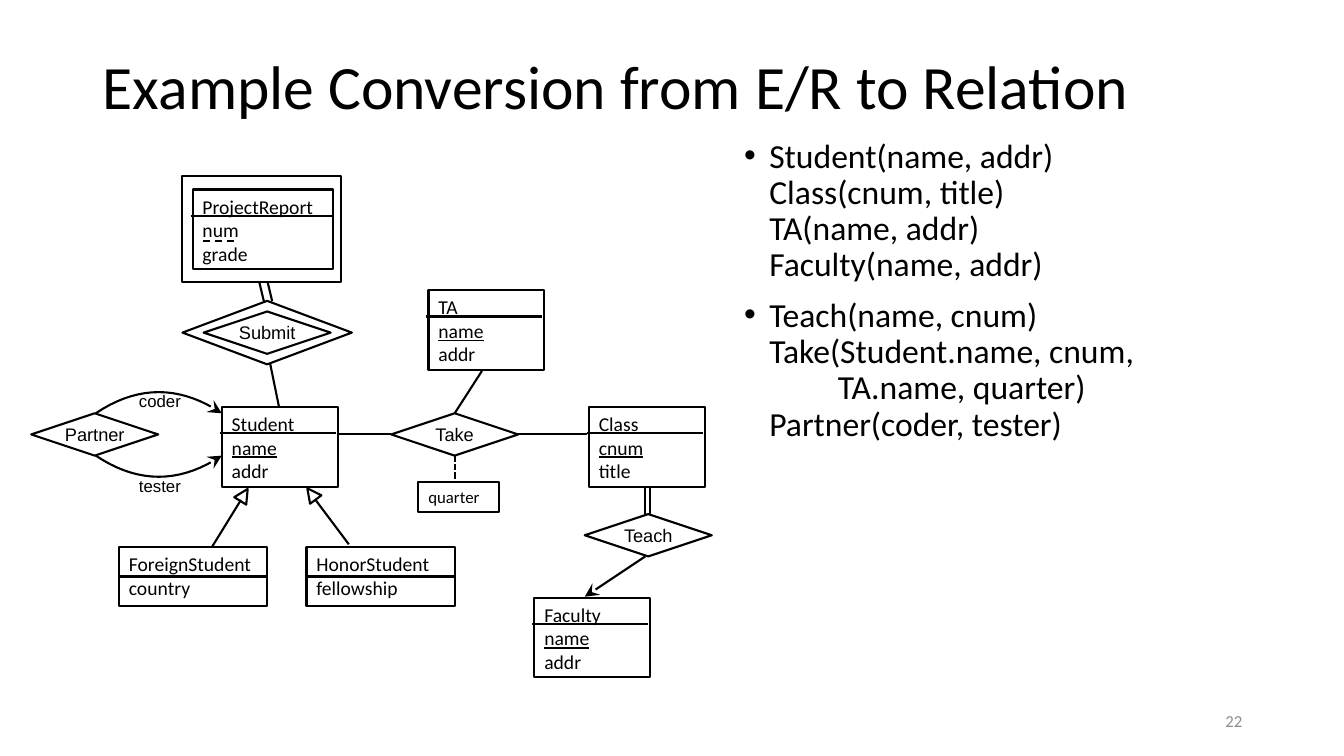
from lxml import etree
from pptx import Presentation
from pptx.dml.color import RGBColor
from pptx.enum.dml import MSO_LINE
from pptx.enum.shapes import MSO_CONNECTOR, MSO_SHAPE
from pptx.enum.text import MSO_ANCHOR, MSO_AUTO_SIZE, PP_ALIGN
from pptx.oxml.ns import qn
from pptx.util import Inches, Pt

BLACK = RGBColor(0x00, 0x00, 0x00)
WHITE = RGBColor(0xFF, 0xFF, 0xFF)
GRAY = RGBColor(0x8C, 0x8C, 0x8C)

# Sizes shared by the diagram parts
ENTITY_SIZE = (1.15, 0.79)
SUBCLASS_SIZE = (1.47, 0.58)
DIAMOND_SIZE = (1.26, 0.42)

# Left, top, name, key, other attribute
ENTITIES = [
    (2.2, 4.04, "Student", "name", "addr"),
    (5.3, 5.93, "Faculty", "name", "addr"),
    (4.25, 2.88, "TA", "name", "addr"),
    (5.84, 4.04, "Class", "cnum", "title"),
]
SUBCLASSES = [
    (1.18, 5.43, "ForeignStudent", "country"),
    (3.04, 5.43, "HonorStudent", "fellowship"),
]
# Centre x, centre y, name
RELATIONSHIPS = [
    (4.51, 4.31, "Take"),
    (6.43, 5.31, "Teach"),
    (2.65, 3.3, "Submit"),
    (0.94, 4.31, "Partner"),
]
# From x, from y, to x, to y
LINKS = [
    (3.36, 4.31, 3.88, 4.31),
    (5.14, 4.31, 5.82, 4.31),
    (4.51, 4.1, 4.78, 3.68),
    (2.68, 3.61, 2.78, 4.1),
    (6.4, 4.67, 6.4, 5.1),
    (6.45, 4.67, 6.45, 5.1),
    (2.57, 2.79, 2.62, 3),
    (2.65, 2.78, 2.7, 2.99),
    (2.1, 5.43, 2.39, 4.96),
    (3.46, 5.4, 3.13, 4.96),
]
# Bullet shown, left indent, space before, lines
BODY = [
    (True, 0.25, 10, ["Student(name, addr)", "Class(cnum, title)",
                      "TA(name, addr)", "Faculty(name, addr)"]),
    (True, 0.25, 10, ["Teach(name, cnum)", "Take(Student.name, cnum,"]),
    (False, 0.93, 0, ["TA.name, quarter)"]),
    (False, 0.25, 0, ["Partner(coder, tester)"]),
]


def apply_format(target, **values):
    for name, value in values.items():
        setattr(target, name, value)


def place(shape, left, top, width, height):
    apply_format(shape, left=Inches(left), top=Inches(top),
                 width=Inches(width), height=Inches(height))


def set_font(font, size, name="Calibri", color=BLACK):
    apply_format(font, size=Pt(size), name=name)
    font.color.rgb = color


def set_line(line, width=1.5):
    line.color.rgb = BLACK
    line.width = Pt(width)


def add_arrowhead(shape):
    etree.SubElement(shape.line._get_or_add_ln(), qn("a:tailEnd"),
                     type="stealth", w="lg", len="lg")


def add_link(slide, start_x, start_y, end_x, end_y, width=1.5, dash=None):
    link = slide.shapes.add_connector(
        MSO_CONNECTOR.STRAIGHT, Inches(start_x), Inches(start_y),
        Inches(end_x), Inches(end_y))
    set_line(link.line, width)
    if dash:
        link.line.dash_style = dash
    etree.SubElement(link._element.spPr, qn("a:effectLst"))
    return link


def add_outlined(slide, kind, left, top, width, height, filled=True):
    shape = slide.shapes.add_shape(
        kind, Inches(left), Inches(top), Inches(width), Inches(height))
    shape.shadow.inherit = False
    if filled:
        shape.fill.solid()
        shape.fill.fore_color.rgb = WHITE
    else:
        shape.fill.background()
    set_line(shape.line)
    return shape


def add_box(slide, left, top, width, height, paragraphs, size=14, key=None):
    """A rectangle whose paragraphs are lists of lines."""
    box = add_outlined(slide, MSO_SHAPE.RECTANGLE, left, top, width, height)
    frame = box.text_frame
    frame.vertical_anchor = MSO_ANCHOR.TOP
    for index, lines in enumerate(paragraphs):
        paragraph = frame.add_paragraph() if index else frame.paragraphs[0]
        paragraph.alignment = PP_ALIGN.LEFT
        for line_index, line in enumerate(lines):
            if line_index:
                paragraph.add_line_break()
            run = paragraph.add_run()
            run.text = line
            set_font(run.font, size)
            if line == key:
                run.font.underline = True


def add_entity(slide, left, top, name, key, attribute):
    width, height = ENTITY_SIZE
    add_box(slide, left, top, width, height, [[name, key], [attribute]], key=key)
    add_link(slide, left - 0.02, top + 0.26, left + width - 0.02, top + 0.26)


def add_subclass(slide, left, top, name, attribute):
    width, height = SUBCLASS_SIZE
    add_box(slide, left, top, width, height, [[name, attribute]])
    add_link(slide, left, top + 0.29, left + width, top + 0.29)


def add_diamond(slide, center_x, center_y, name="", size=DIAMOND_SIZE):
    width, height = size
    diamond = add_outlined(slide, MSO_SHAPE.DIAMOND, center_x - width / 2,
                           center_y - height / 2, width, height)
    if name:
        frame = diamond.text_frame
        apply_format(frame, margin_left=0, margin_right=0, margin_top=0,
                     margin_bottom=0, word_wrap=False,
                     vertical_anchor=MSO_ANCHOR.MIDDLE)
        paragraph = frame.paragraphs[0]
        paragraph.text = name
        paragraph.alignment = PP_ALIGN.CENTER
        set_font(paragraph.font, 13, "Arial")


def add_role_arc(slide, start_y, bulge):
    """A parabolic arrow from Partner to Student."""
    left, width, steps = 0.95, 1.25, 18
    points = [(Inches(left + width * step / steps),
               Inches(start_y + bulge * 4 * step * (steps - step) / steps ** 2))
              for step in range(steps + 1)]
    builder = slide.shapes.build_freeform(*points[0])
    builder.add_line_segments(points[1:], close=False)
    arc = builder.convert_to_shape()
    arc.shadow.inherit = False
    arc.fill.background()
    set_line(arc.line)
    add_arrowhead(arc)


def add_label(slide, left, top, width, height, text, size, name="Calibri",
              color=BLACK, wrap=False, alignment=PP_ALIGN.LEFT):
    label = slide.shapes.add_textbox(
        Inches(left), Inches(top), Inches(width), Inches(height))
    apply_format(label.text_frame, word_wrap=wrap, vertical_anchor=MSO_ANCHOR.MIDDLE)
    paragraph = label.text_frame.paragraphs[0]
    paragraph.text = text
    paragraph.alignment = alignment
    set_font(paragraph.runs[0].font, size, name, color)


def fill_title(title):
    place(title, 0.92, 0.4, 11.5, 0.97)
    title.text_frame.text = "Example Conversion from E/R to Relation"
    apply_format(title.text_frame, vertical_anchor=MSO_ANCHOR.MIDDLE,
                 auto_size=MSO_AUTO_SIZE.NONE)
    paragraph = title.text_frame.paragraphs[0]
    apply_format(paragraph, alignment=PP_ALIGN.LEFT, line_spacing=0.9)
    set_font(paragraph.runs[0].font, 44)


def fill_body(body):
    place(body, 7.28, 1.33, 5.89, 4.91)
    frame = body.text_frame
    frame.auto_size = MSO_AUTO_SIZE.NONE
    for index, (bullet, indent, space, lines) in enumerate(BODY):
        paragraph = frame.add_paragraph() if index else frame.paragraphs[0]
        paragraph.text = "\v".join(lines)
        apply_format(paragraph, line_spacing=0.9, space_before=Pt(space))
        properties = paragraph._p.get_or_add_pPr()
        properties.set("marL", str(Inches(indent)))
        properties.set("indent", str(Inches(-0.25 if bullet else 0)))
        if bullet:
            etree.SubElement(properties, qn("a:buChar"), char="•")
        else:
            etree.SubElement(properties, qn("a:buNone"))
        for run in paragraph.runs:
            set_font(run.font, 24)


def main():
    presentation = Presentation()
    apply_format(presentation, slide_width=Inches(13.33), slide_height=Inches(7.5))
    slide = presentation.slides.add_slide(presentation.slide_layouts[1])
    fill_title(slide.shapes.title)
    fill_body(slide.placeholders[1])
    add_label(slide, 9.42, 6.95, 3, 0.4, "22", 12, color=GRAY, wrap=True,
              alignment=PP_ALIGN.RIGHT)

    # Relationships, with the outer diamond of the weak one
    add_diamond(slide, 2.65, 3.3, size=(1.68, 0.63))
    for relationship in RELATIONSHIPS:
        add_diamond(slide, *relationship)

    # Links and roles
    for link in LINKS:
        add_link(slide, *link)
    add_link(slide, 4.51, 4.52, 4.51, 4.78, dash=MSO_LINE.SQUARE_DOT)
    add_arrowhead(add_link(slide, 6.4, 5.52, 5.8, 5.92))
    for start_y, bulge, label_top, role in [(4.1, -0.21, 3.83, "coder"),
                                            (4.52, 0.21, 4.67, "tester")]:
        add_role_arc(slide, start_y, bulge)
        add_label(slide, 1.28, label_top, 0.62, 0.3, role, 12, "Arial")

    # Entities and subclasses
    for entity in ENTITIES:
        add_entity(slide, *entity)
    for subclass in SUBCLASSES:
        add_subclass(slide, *subclass)
    for left, top, rotation in [(2.35, 4.84, 31.8), (3.02, 4.83, 323.4)]:
        triangle = add_outlined(slide, MSO_SHAPE.ISOSCELES_TRIANGLE,
                                left, top, 0.14, 0.14, filled=False)
        triangle.rotation = rotation

    # Weak entity with its partial key, and the relationship attribute
    add_outlined(slide, MSO_SHAPE.RECTANGLE, 1.81, 1.75, 1.57, 1.05)
    add_box(slide, 1.91, 1.88, 1.39, 0.79, [["ProjectReport", "num"], ["grade"]])
    add_link(slide, 1.89, 2.14, 3.29, 2.14)
    add_link(slide, 2.01, 2.39, 2.35, 2.39, width=1.25, dash=MSO_LINE.DASH)
    add_box(slide, 4.15, 4.78, 0.8, 0.3, [["quarter"]], size=12)

    presentation.save("out.pptx")


if __name__ == "__main__":
    main()
